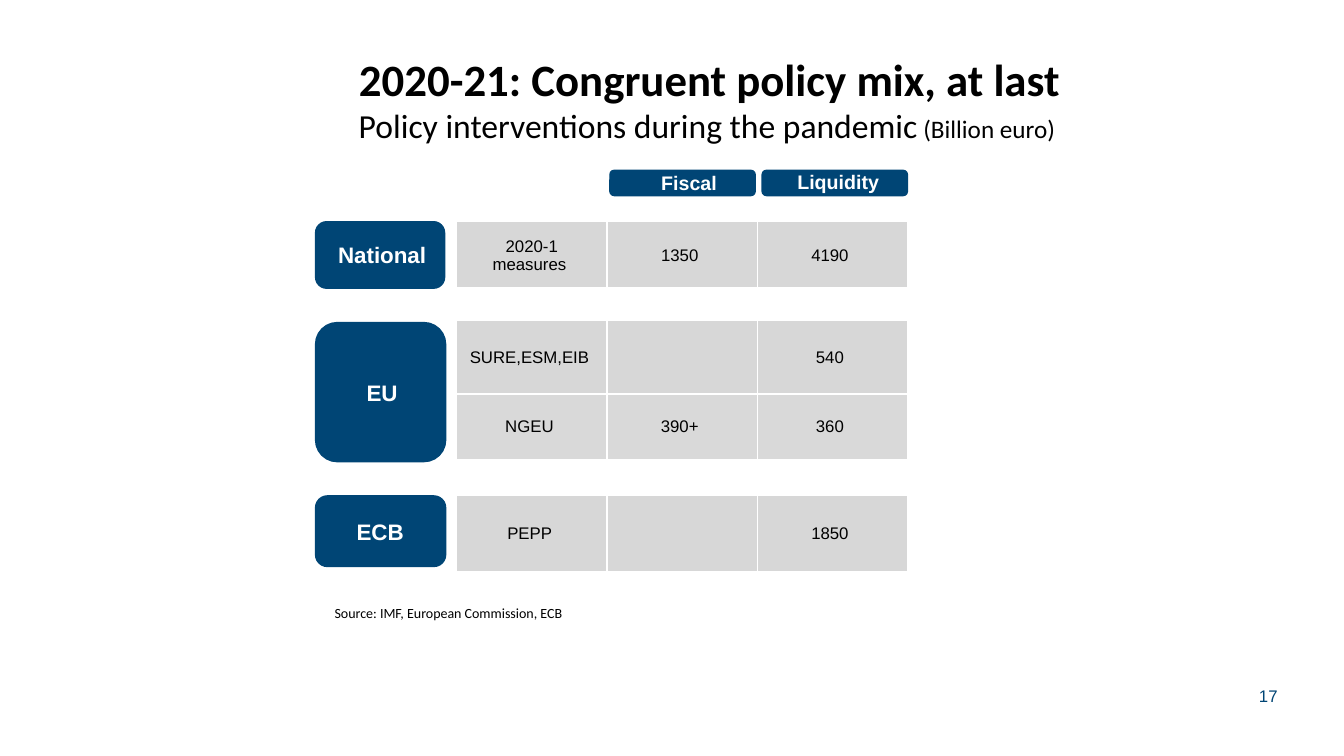
from lxml import etree
from pptx import Presentation
from pptx.dml.color import RGBColor
from pptx.enum.shapes import MSO_SHAPE
from pptx.enum.text import MSO_ANCHOR, MSO_AUTO_SIZE, PP_ALIGN
from pptx.oxml.ns import qn
from pptx.util import Pt

EMU_PER_PX = 9144
NAVY = RGBColor(0x00, 0x45, 0x75)
WHITE = RGBColor(0xFF, 0xFF, 0xFF)
BLACK = RGBColor(0x00, 0x00, 0x00)
GREY = RGBColor(0xD7, 0xD7, 0xD7)
LIGHT_GREY = RGBColor(0xD9, 0xD9, 0xD9)

ROUNDED = MSO_SHAPE.ROUNDED_RECTANGLE
LEFT, CENTER, RIGHT = PP_ALIGN.LEFT, PP_ALIGN.CENTER, PP_ALIGN.RIGHT
TOP, MIDDLE, BOTTOM = MSO_ANCHOR.TOP, MSO_ANCHOR.MIDDLE, MSO_ANCHOR.BOTTOM
NO_AUTOFIT = MSO_AUTO_SIZE.NONE

LEVELS = [
    ("ECB", (313, 492, 129, 70), (322, 509, 110, 36)),
    ("EU", (313, 320, 129, 138), (351, 371, 56, 36)),
    ("National", (313, 220, 128, 66), (319, 234, 120, 36)),
]
INSTRUMENTS = [
    ("Liquidity", (756, 169, 144, 25), (781, 164, 153, 34)),
    ("Fiscal", (605, 169, 144, 25), (646, 165, 97, 34)),
]
COLUMN_WIDTH = 149
MEASURES = [
    (67, GREY, ("2020-1 measures ", "1350 ", "4190 ")),
    (31, None, ("", "", "")),
    (73, GREY, ("SURE,ESM,EIB ", "", "540 ")),
    (65, LIGHT_GREY, ("NGEU ", "390+ ", "360 ")),
    (36, None, ("", "", "")),
    (75, GREY, ("PEPP ", "", "1850 ")),
]


def px(*lengths):
    return [length * EMU_PER_PX for length in lengths]


def add_run(paragraph, text, size, color, font="Arial", bold=False):
    run = paragraph.add_run()
    run.text = text
    run.font.name = font
    run.font.size = Pt(size)
    run.font.bold = bold
    run.font.color.rgb = color


def add_text(slide, box, text, size, color, align=LEFT, anchor=TOP, **style):
    frame = slide.shapes.add_textbox(*px(*box)).text_frame
    frame.word_wrap = True
    frame.vertical_anchor = anchor
    paragraph = frame.paragraphs[0]
    paragraph.alignment = align
    add_run(paragraph, text, size, color, **style)


def add_label(slide, text, plate_box, text_box, size, align):
    plate = slide.shapes.add_shape(ROUNDED, *px(*plate_box))
    plate.shadow.inherit = False
    plate.fill.solid()
    plate.fill.fore_color.rgb = NAVY
    plate.line.color.rgb = NAVY
    plate.line.width = Pt(1)
    add_text(slide, text_box, text, size, WHITE, align, bold=True)


def add_title(slide):
    title = slide.shapes.title
    title.left, title.top, title.width, title.height = px(285, 46, 838, 135)
    frame = title.text_frame
    frame.word_wrap = True
    frame.auto_size = NO_AUTOFIT
    frame.vertical_anchor = TOP
    heading, subtitle = frame.paragraphs[0], frame.add_paragraph()
    heading.alignment = subtitle.alignment = CENTER
    add_run(heading, "2020-21: Congruent policy mix, at last", 32, BLACK, "Calibri", True)
    add_run(subtitle, "Policy interventions during the pandemic", 24, BLACK, "Calibri")
    add_run(subtitle, " (Billion euro) ", 18, BLACK, "Calibri")


def add_borders(cell, bottom_width):
    properties = cell._tc.get_or_add_tcPr()
    for side, width in (("L", 1), ("R", 1), ("T", 1), ("B", bottom_width)):
        border = etree.SubElement(properties, qn(f"a:ln{side}"), w=str(Pt(width)))
        fill = etree.SubElement(border, qn("a:solidFill"))
        etree.SubElement(fill, qn("a:srgbClr"), val=str(WHITE))


def fill_cell(cell, text, color, bottom_width):
    cell.vertical_anchor = MIDDLE
    paragraph = cell.text_frame.paragraphs[0]
    paragraph.alignment = CENTER
    if text:
        add_run(paragraph, text, 12, BLACK)
    else:
        etree.SubElement(paragraph._p, qn("a:endParaRPr"), sz="1200")
    if color is None:
        cell.fill.background()
    else:
        add_borders(cell, bottom_width)
        cell.fill.solid()
        cell.fill.fore_color.rgb = color


def add_measures_table(slide):
    columns = len(MEASURES[0][2])
    height = sum(row_height for row_height, _, _ in MEASURES)
    frame = slide.shapes.add_table(
        len(MEASURES), columns, *px(453, 220, columns * COLUMN_WIDTH, height)
    )
    table = frame.table
    table.first_row = False
    table.horz_banding = False
    for column in table.columns:
        column.width = COLUMN_WIDTH * EMU_PER_PX
    for index, (row_height, color, texts) in enumerate(MEASURES):
        row = table.rows[index]
        row.height = row_height * EMU_PER_PX
        for cell, text in zip(row.cells, texts):
            fill_cell(cell, text, color, 3 if index == 0 else 1)


def main():
    deck = Presentation()
    deck.slide_width, deck.slide_height = px(1333, 750)
    slide = deck.slides.add_slide(deck.slide_layouts[5])
    add_title(slide)
    for text, plate_box, text_box in LEVELS:
        add_label(slide, text, plate_box, text_box, 16, CENTER)
    add_measures_table(slide)
    for text, plate_box, text_box in INSTRUMENTS:
        add_label(slide, text, plate_box, text_box, 14, LEFT)
    add_text(slide, (322, 595, 655, 27), "Source: IMF, European Commission, ECB",
             10, BLACK, font="Calibri")
    add_text(slide, (1228, 665, 49, 40), "17", 12, NAVY, RIGHT, BOTTOM)
    deck.save("out.pptx")


if __name__ == "__main__":
    main()
